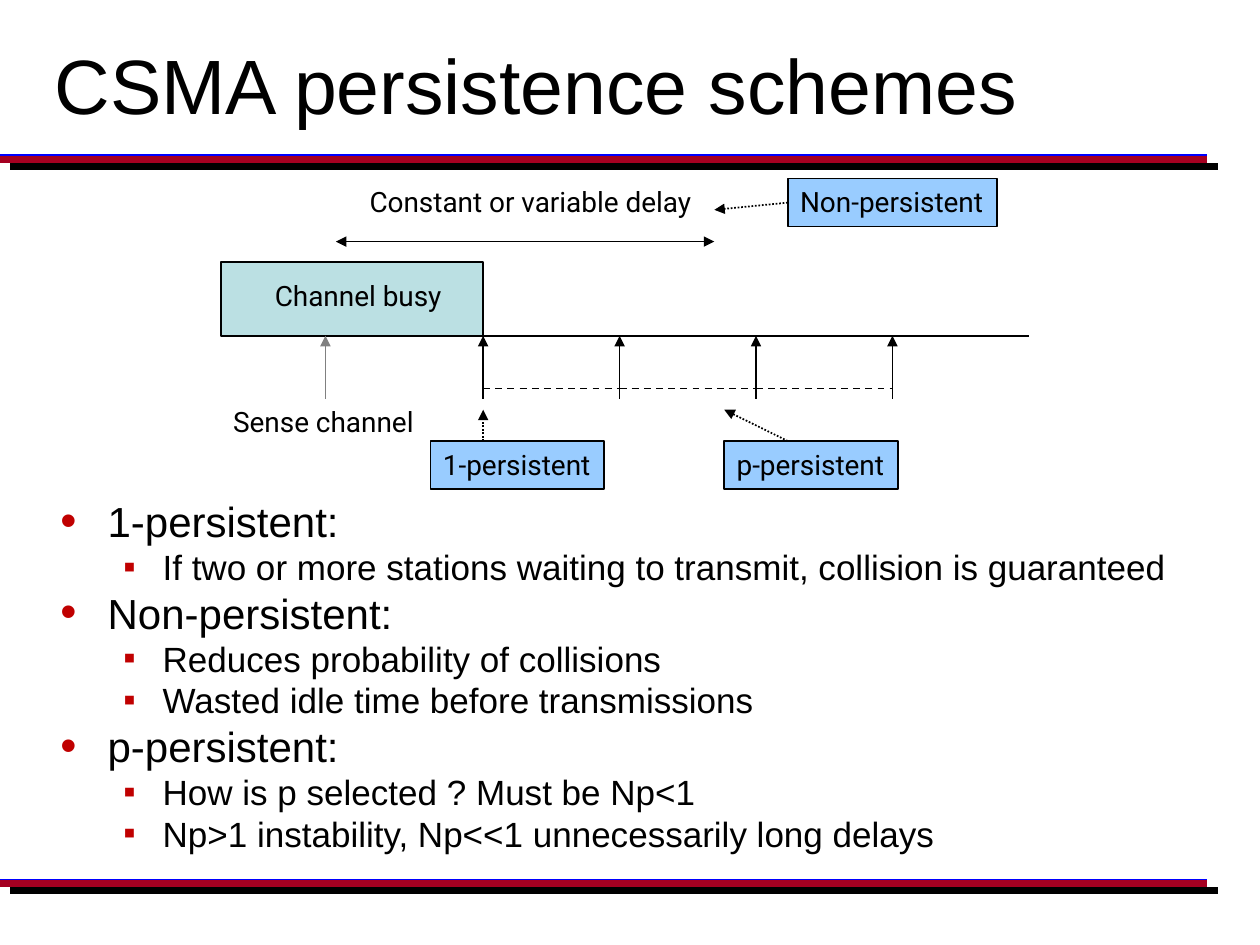
from lxml.etree import SubElement as Sub
from pptx import Presentation
from pptx.dml.color import RGBColor as RGB
from pptx.enum.dml import MSO_LINE as DASH
from pptx.enum.shapes import MSO_CONNECTOR as CONN, MSO_SHAPE as SHAPE
from pptx.enum.text import MSO_ANCHOR as ANCHOR, MSO_AUTO_SIZE as FIT, PP_ALIGN as ALIGN
from pptx.oxml.ns import qn
from pptx.util import Cm, Pt

COLORS = {"black": "000000", "blue": "0000FF", "red": "A50021", "bullet": "C00000",
          "sky": "99CCFF", "teal": "BBE0E3", "gray": "808080"}

TITLE = "CSMA persistence schemes"
POINTS = [
    ("1-persistent:",
     ["If two or more stations waiting to transmit, collision is guaranteed"]),
    ("Non-persistent:",
     ["Reduces probability of collisions", "Wasted idle time before transmissions"]),
    ("p-persistent:",
     ["How is p selected ? Must be Np<1",
      "Np>1 instability, Np<<1 unnecessarily long delays"]),
]
# Text, then left, top, width, height in cm
LABELS = [
    ("Constant or variable delay", (7.2, 3.6, 7.05, 0.94)),
    ("Channel busy", (5.29, 5.5, 3.97, 0.94)),
    ("Sense channel", (4.45, 8.04, 4.23, 0.94)),
]
SCHEMES = [
    ("Non-persistent", (15.88, 3.6, 4.22, 0.97)),
    ("1-persistent", (8.68, 8.89, 3.5, 0.97)),
    ("p-persistent", (14.6, 8.89, 3.5, 0.97)),
]
# Bullet sign, its size in %, text size, left margin and indent in cm
LEVELS = [("•", 110, 24, 0.95, -0.95), ("▪", 100, 20, 2.06, -0.79)]

RULES = (3.18, 17.78)
BUSY = (4.45, 5.29, 5.29, 1.48)
AXIS, FOOT, SLOT = 6.77, 8.04, 7.83
TICKS = [9.74 + 2.75 * i for i in range(4)]

prs = Presentation()
prs.slide_width, prs.slide_height = Cm(25.4), Cm(19.05)
shapes = prs.slides.add_slide(prs.slide_layouts[6]).shapes


def color(name):
    return RGB.from_string(COLORS[name])


def add_line(x1, y1, x2, y2, tint="black", width=1, dash=None, ends=()):
    """Draw a line; ends lists which of headEnd and tailEnd get a triangle."""
    line = shapes.add_connector(CONN.STRAIGHT, Cm(x1), Cm(y1), Cm(x2), Cm(y2))
    line.line.color.rgb = color(tint)
    line.line.width = Pt(width)
    if dash is not None:
        line.line.dash_style = dash
    for end in ends:
        Sub(line.line._get_or_add_ln(), qn("a:" + end), type="triangle")
    Sub(line._element.spPr, qn("a:effectLst"))
    return line


def add_arrow(x1, y1, x2, y2, **style):
    return add_line(x1, y1, x2, y2, ends=["tailEnd"], **style)


def add_rule(y):
    """Draw a red rule over a blue one that casts a hard black shadow."""
    blue = add_line(0, y, 24.34, y, "blue", 4)
    shade = Sub(blue._element.spPr.find(qn("a:effectLst")), qn("a:outerShdw"),
                dist=str(Pt(7.8)), dir="2400000", algn="ctr", rotWithShape="0")
    Sub(shade, qn("a:srgbClr"), val=COLORS["black"])
    add_line(0, y + 0.03, 24.34, y + 0.03, "red", 4)


def add_rect(box, fill):
    rect = shapes.add_shape(SHAPE.RECTANGLE, *map(Cm, box))
    rect.shadow.inherit = False
    rect.fill.solid()
    rect.fill.fore_color.rgb = color(fill)
    rect.line.color.rgb = color("black")
    rect.line.width = Pt(1)
    return rect


def add_text(box):
    return shapes.add_textbox(*map(Cm, box))


def set_font(para, face, size):
    para.font.name, para.font.size = face, Pt(size)
    para.font.color.rgb = color("black")


def set_label(shape, text):
    frame = shape.text_frame
    frame.text = text
    frame.word_wrap = False
    frame.auto_size = FIT.SHAPE_TO_FIT_TEXT
    frame.vertical_anchor = ANCHOR.TOP
    frame.paragraphs[0].alignment = ALIGN.LEFT
    set_font(frame.paragraphs[0], "Roboto", 16)


def set_point(para, text, level):
    sign, scale, size, left, indent = LEVELS[level]
    para.text = text
    para.level = level
    props = para._p.get_or_add_pPr()
    props.set("marL", str(Cm(left)))
    props.set("indent", str(Cm(indent)))
    Sub(Sub(props, qn("a:buClr")), qn("a:srgbClr"), val=COLORS["bullet"])
    Sub(props, qn("a:buSzPct"), val=str(scale * 1000))
    Sub(props, qn("a:buFont"), typeface="Arial")
    Sub(props, qn("a:buChar"), char=sign)
    para.line_spacing = 0.8
    set_font(para, "Arial", size)


# Rules, title and points
for y in RULES:
    add_rule(y)

title = add_text((0.85, 0, 23.28, 3.39)).text_frame
title.text = TITLE
title.word_wrap = True
title.vertical_anchor = ANCHOR.MIDDLE
set_font(title.paragraphs[0], "Arial", 44)

body = add_text((0.97, 10.06, 22.93, 7.3)).text_frame
body.word_wrap = True
rows = [row for head, subs in POINTS for row in [(head, 0)] + [(sub, 1) for sub in subs]]
for i, (text, level) in enumerate(rows):
    para = body.add_paragraph() if i else body.paragraphs[0]
    set_point(para, text, level)
    if i:
        para.space_before = Pt(round(0.23 * LEVELS[level][2], 1))

# Timeline
add_rect(BUSY, "teal")
add_line(TICKS[0], AXIS, 20.75, AXIS)
for x in TICKS:
    add_arrow(x, FOOT, x, AXIS)
for x1, x2 in zip(TICKS, TICKS[1:]):
    add_line(x1, SLOT, x2, SLOT, dash=DASH.DASH)
add_line(6.77, 4.87, 14.4, 4.87, ends=["headEnd", "tailEnd"])
add_arrow(6.56, FOOT, 6.56, AXIS, tint="gray")

# Labels and schemes
for text, box in LABELS:
    set_label(add_text(box), text)
rects = {}
for text, box in SCHEMES:
    rects[text] = add_rect(box, "sky")
    set_label(rects[text], text)

dots = {"dash": DASH.ROUND_DOT}
add_arrow(15.88, 8.89, 14.6, 8.26, **dots)
add_arrow(TICKS[0], 8.89, TICKS[0], 8.26, **dots)
add_arrow(15.88, 4.09, 14.4, 4.23, **dots).begin_connect(rects["Non-persistent"], 1)

prs.save("out.pptx")
